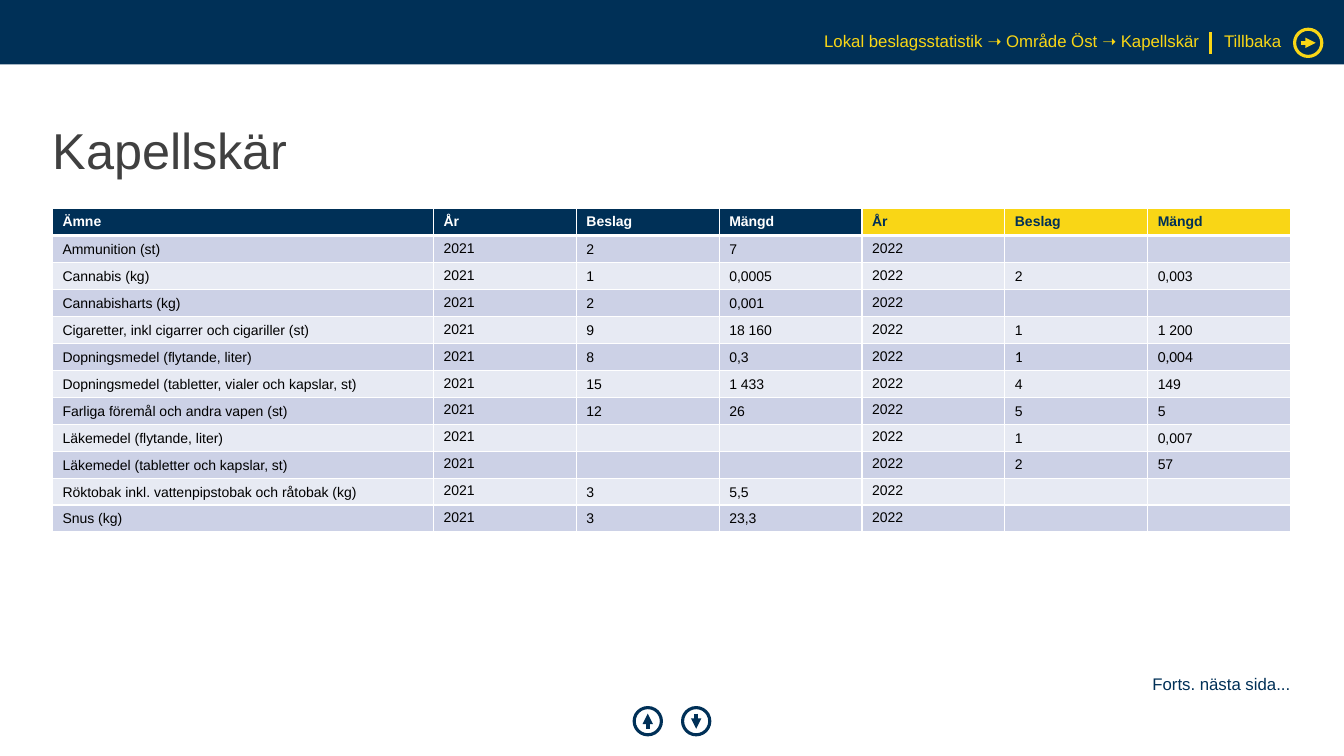
import pptx
import pptx.dml.color
import pptx.enum.shapes
import pptx.enum.text
import pptx.oxml.ns
import pptx.util
from lxml import etree

Inches, Pt = pptx.util.Inches, pptx.util.Pt
Align, Anchor = pptx.enum.text.PP_ALIGN, pptx.enum.text.MSO_ANCHOR
Shape = pptx.enum.shapes.MSO_SHAPE
qn = pptx.oxml.ns.qn

TITLE = "Kapellskär"
BREADCRUMB = "Lokal beslagsstatistik ➝ Område Öst ➝ Kapellskär"
BACK = "Tillbaka"
CONTINUED = "Forts. nästa sida..."

YEARS = ("2021", "2022")
HEADER = ("Ämne",) + ("År", "Beslag", "Mängd") * 2
# substance, then seizures and quantity for each year
SEIZURES = [
    ("Ammunition (st)", "2", "7", "", ""),
    ("Cannabis (kg)", "1", "0,0005", "2", "0,003"),
    ("Cannabisharts (kg)", "2", "0,001", "", ""),
    ("Cigaretter, inkl cigarrer och cigariller (st)", "9", "18 160", "1", "1 200"),
    ("Dopningsmedel (flytande, liter)", "8", "0,3", "1", "0,004"),
    ("Dopningsmedel (tabletter, vialer och kapslar, st)", "15", "1 433", "4", "149"),
    ("Farliga föremål och andra vapen (st)", "12", "26", "5", "5"),
    ("Läkemedel (flytande, liter)", "", "", "1", "0,007"),
    ("Läkemedel (tabletter och kapslar, st)", "", "", "2", "57"),
    ("Röktobak inkl. vattenpipstobak och råtobak (kg)", "3", "5,5", "", ""),
    ("Snus (kg)", "3", "23,3", "", ""),
]
# (row, column) of cells with tight margins, and of those set in the larger face
TIGHT_CELLS = {(5, 5), (5, 6), (8, 0), (8, 5), (8, 6), (9, 5), (9, 6)}
LARGE_CELLS = {(5, 5), (5, 6)}

THEME = {
    "navy": "003057", "yellow": "F9D616", "white": "FFFFFF",
    "title": "404040", "body": "000000", "bands": ("CCD1E6", "E7EAF3"),
    "font": "Arial", "large_font": "Calibri",
    "title_size": 36, "link_size": 12, "table_size": 10, "large_size": 11,
}

# centre x, centre y, direction, colour
NAV_BUTTONS = [
    (12.975, 0.425, (1, 0), THEME["yellow"]),
    (6.905, 7.155, (0, 1), THEME["navy"]),
    (6.425, 7.155, (0, -1), THEME["navy"]),
]
BUTTON_SIZE, ARROW_LENGTH = 0.27, 0.15
SLIDE_W, SLIDE_H = 13.33, 7.5
LEFT, CONTENT_W = 0.52, 12.28
SUBJECT_W, ROW_H = 3.78, 0.24


def rgb(value):
    return pptx.dml.color.RGBColor.from_string(value)


def add_run(paragraph, text, size, color, font=THEME["font"], bold=False):
    run = paragraph.add_run()
    run.text = text
    run.font.size, run.font.name, run.font.bold = Pt(size), font, bold
    run.font.color.rgb = rgb(color)


def add_label(slide, box, text, size, color, align=Align.LEFT, anchor=Anchor.TOP):
    frame = slide.shapes.add_textbox(*map(Inches, box)).text_frame
    frame.word_wrap = True
    frame.vertical_anchor = anchor
    frame.margin_left = frame.margin_right = frame.margin_top = frame.margin_bottom = 0
    paragraph = frame.paragraphs[0]
    paragraph.alignment, paragraph.line_spacing = align, 0.9
    add_run(paragraph, text, size, color)


def add_line(slide, start, end, color, width, arrow=False):
    line = slide.shapes.add_connector(
        pptx.enum.shapes.MSO_CONNECTOR.STRAIGHT, *map(Inches, start + end))
    line.line.color.rgb, line.line.width = rgb(color), Pt(width)
    properties = line._element.spPr
    if arrow:
        etree.SubElement(properties.find(qn("a:ln")), qn("a:tailEnd"), type="triangle")
    etree.SubElement(properties, qn("a:effectLst"))


def add_nav_button(slide, x, y, direction, color):
    dx, dy = (part * ARROW_LENGTH / 2 for part in direction)
    add_line(slide, (x - dx, y - dy), (x + dx, y + dy), color, 2.5, arrow=True)
    corner = BUTTON_SIZE / 2
    ring = slide.shapes.add_shape(Shape.OVAL, *map(
        Inches, (x - corner, y - corner, BUTTON_SIZE, BUTTON_SIZE)))
    ring.shadow.inherit = False
    ring.fill.background()
    ring.line.color.rgb, ring.line.width = rgb(color), Pt(2.25)


def add_borders(cell, **widths):
    """White borders; widths in points, keyed by side L, R, T, B."""
    for side, width in widths.items():
        border = etree.SubElement(
            cell._tc.get_or_add_tcPr(), qn("a:ln" + side), w=str(Pt(width)))
        fill = etree.SubElement(border, qn("a:solidFill"))
        etree.SubElement(fill, qn("a:srgbClr"), val=THEME["white"])


def fill_cell(cell, row, column, text):
    is_header, later_year = row == 0, column > 3
    add_borders(cell, L=1, R=1, T=3 if row == 1 else 1, B=3 if is_header else 1)
    if is_header:
        background = THEME["yellow" if later_year else "navy"]
        color = THEME["navy" if later_year else "white"]
    else:
        background, color = THEME["bands"][(row - 1) % 2], THEME["body"]
    cell.fill.solid()
    cell.fill.fore_color.rgb = rgb(background)

    if (row, column) in TIGHT_CELLS:
        cell.vertical_anchor = Anchor.MIDDLE
        cell.margin_left, cell.margin_right = Inches(0.1), Inches(0.01)
        cell.margin_top, cell.margin_bottom = Inches(0.01), 0
    elif not is_header and column not in (1, 4):
        cell.vertical_anchor = Anchor.BOTTOM

    paragraph = cell.text_frame.paragraphs[0]
    size, font = THEME["table_size"], THEME["font"]
    if (row, column) in LARGE_CELLS:
        size, font = THEME["large_size"], THEME["large_font"]
    if text:
        add_run(paragraph, text, size, color, font, is_header)
    else:
        etree.SubElement(paragraph._p, qn("a:endParaRPr"), sz=str(size * 100))


def add_seizure_table(slide):
    rows = [HEADER] + [
        (subject, YEARS[0], *values[:2], YEARS[1], *values[2:])
        for subject, *values in SEIZURES]
    table = slide.shapes.add_table(
        len(rows), len(HEADER), Inches(LEFT), Inches(2.07),
        Inches(CONTENT_W), Inches(ROW_H * len(rows))).table
    table.horz_banding = False
    value_w = (CONTENT_W - SUBJECT_W) / (len(HEADER) - 1)
    for index, column in enumerate(table.columns):
        column.width = Inches(value_w if index else SUBJECT_W)
    for r, row in enumerate(rows):
        table.rows[r].height = Inches(ROW_H)
        for c, text in enumerate(row):
            fill_cell(table.cell(r, c), r, c, text)


def main():
    deck = pptx.Presentation()
    deck.slide_width, deck.slide_height = Inches(SLIDE_W), Inches(SLIDE_H)
    slide = deck.slides.add_slide(deck.slide_layouts[6])

    banner = slide.shapes.add_shape(Shape.RECTANGLE, 0, 0, Inches(SLIDE_W), Inches(0.64))
    banner.shadow.inherit = False
    banner.fill.solid()
    banner.fill.fore_color.rgb = rgb(THEME["navy"])
    banner.line.fill.background()

    add_label(slide, (LEFT, 0.79, CONTENT_W, 1.45), TITLE,
              THEME["title_size"], THEME["title"], anchor=Anchor.MIDDLE)
    link_size = THEME["link_size"]
    add_label(slide, (12.14, 0.33, 1.15, 0.19), BACK, link_size, THEME["yellow"])
    add_line(slide, (12.01, 0.32), (12.01, 0.54), THEME["yellow"], 2.25)
    add_seizure_table(slide)
    for button in NAV_BUTTONS:
        add_nav_button(slide, *button)
    add_label(slide, (5.5, 0.33, 6.4, 0.19), BREADCRUMB, link_size,
              THEME["yellow"], Align.RIGHT)
    add_label(slide, (6.4, 6.71, 6.4, 0.19), CONTINUED, link_size,
              THEME["navy"], Align.RIGHT)
    deck.save("out.pptx")


if __name__ == "__main__":
    main()
